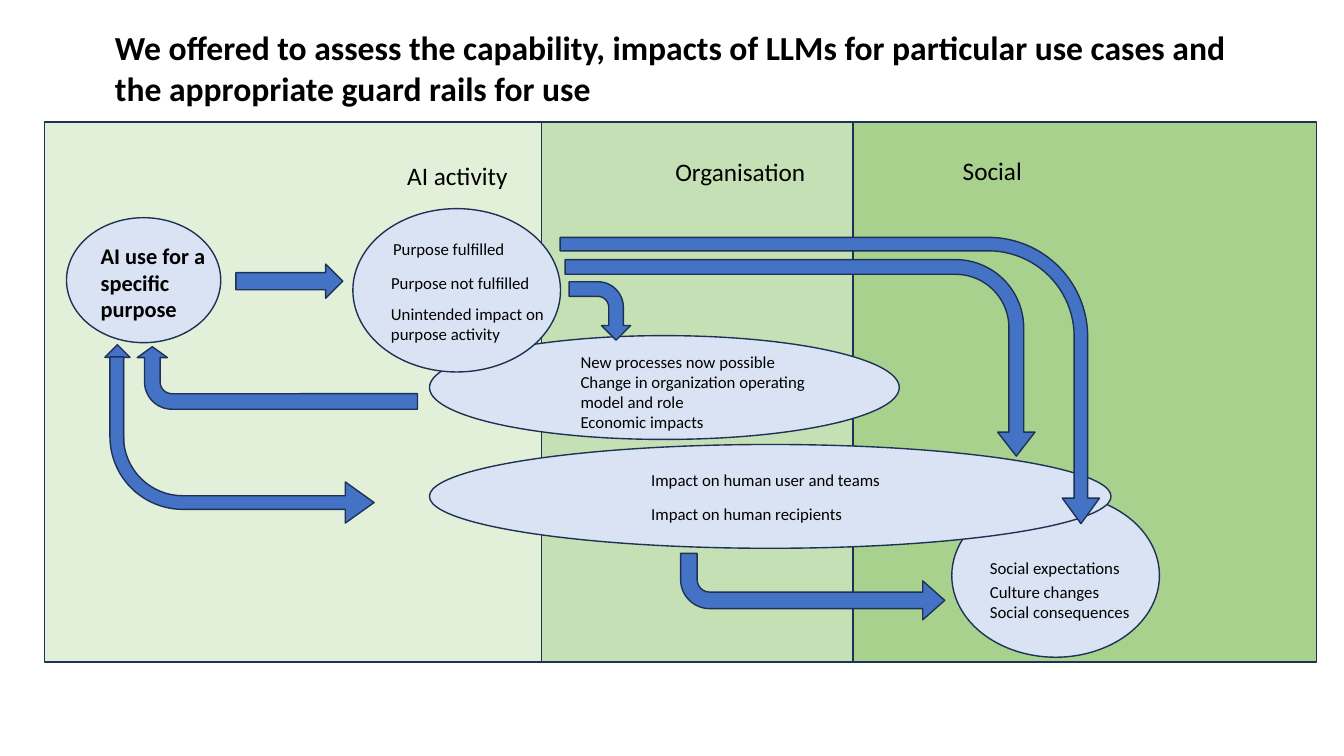
from pptx import Presentation
from pptx import util as u
from pptx.dml.color import RGBColor
from pptx.enum import shapes, text

# The grid has cells of one inch: places are (column, row, columns wide, rows high)
COLUMNS, ROWS = 13.33, 7.5
FONT = "Calibri"
BLACK = RGBColor(0x00, 0x00, 0x00)
OUTLINE = RGBColor(0x1E, 0x32, 0x56)
ARROW_BLUE = RGBColor(0x44, 0x72, 0xC4)
PALE_BLUE = RGBColor(0xDA, 0xE3, 0xF3)
PALE_GREEN = RGBColor(0xE2, 0xF0, 0xD9)
LIGHT_GREEN = RGBColor(0xC5, 0xE0, 0xB4)
MID_GREEN = RGBColor(0xA9, 0xD1, 0x8E)

TITLE = ("We offered to assess the capability, impacts of LLMs for particular "
         "use cases and the appropriate guard rails for use")
TITLE_PLACE = (1.04, 0.22, 11.51, 0.91)

BAND_TOP, BAND_HEIGHT = 1.21, 5.36
BAND_EDGES = [0.44, 5.37, 8.46, 13.06]
BAND_FILLS = [PALE_GREEN, LIGHT_GREEN, MID_GREEN]

ELLIPSES = {
    "purpose": (0.66, 2.16, 1.53, 1.24),
    "society": (9.44, 4.9, 2.06, 1.62),
    "people": (4.26, 4.41, 6.76, 1.03),
    "organisation": (4.26, 3.33, 4.66, 1.03),
    "activity": (3.5, 2.07, 2.06, 1.62),
}

# place, size, bold, wrap, paragraphs
LABELS = [
    ((3.94, 1.54, 1.21, 0.4), 18, False, False, ["AI activity"]),
    ((6.6, 1.5, 1.5, 0.4), 18, False, False, ["Organisation"]),
    ((9.45, 1.49, 0.85, 0.4), 18, False, False, ["Social"]),
    ((0.9, 2.35, 1.25, 0.91), 16, True, True, ["AI use for a specific purpose"]),
    ((3.8, 2.32, 1.32, 0.3), 12, False, False, ["Purpose fulfilled"]),
    ((3.78, 2.66, 1.59, 0.3), 12, False, False, ["Purpose not fulfilled"]),
    ((3.78, 2.96, 2.26, 0.5), 12, False, True,
     ["Unintended impact on purpose activity"]),
    ((5.66, 3.44, 2.57, 0.91), 12, False, True,
     ["New processes now possible",
      "Change in organization operating model and role",
      "Economic impacts"]),
    ((6.36, 4.61, 2.5, 0.3), 12, False, False, ["Impact on human user and teams"]),
    ((6.36, 4.95, 2.12, 0.3), 12, False, False, ["Impact on human recipients"]),
    ((9.72, 5.48, 1.51, 0.3), 12, False, False, ["Social expectations"]),
    ((9.72, 5.72, 1.86, 0.5), 12, False, True,
     ["Culture changes", "Social consequences"]),
]

STRAIGHT = shapes.MSO_SHAPE.RIGHT_ARROW
BENT = shapes.MSO_SHAPE.BENT_ARROW
RETURN_HEAD = (STRAIGHT, (0.67, 3.79, 0.99, 0.25), 270, "", [])
# kind, place before turning, rotation, flips, adjustments
ARROWS = [
    (STRAIGHT, (2.34, 2.62, 1.06, 0.34), 0, "", []),
    (BENT, (5.66, 2.78, 0.58, 0.61), 90, "", []),
    (BENT, (1.09, 3.54, 2.62, 1.65), 0, "V", [0.082, 0.124, 0.173, 0.438]),
    (BENT, (2.44, 2.36, 0.62, 2.78), 90, "HV", [0.249, 0.242, 0.173, 0.438]),
    (BENT, (6.96, 1.22, 1.95, 4.66), 90, "", [0.075, 0.095, 0.122, 0.347]),
    (BENT, (6.81, 1.1, 2.84, 5.35), 90, "", [0.047, 0.065, 0.089, 0.347]),
    (BENT, (6.75, 5.49, 2.62, 0.66), 0, "V", [0.249, 0.293, 0.331, 0.438]),
]


def grid(place):
    return [u.Inches(cells) for cells in place]


def add_filled(slide, kind, place, fill):
    shape = slide.shapes.add_shape(kind, *grid(place))
    shape.shadow.inherit = False
    shape.fill.solid()
    shape.fill.fore_color.rgb = fill
    shape.line.color.rgb = OUTLINE
    shape.line.width = u.Pt(1)
    return shape


def add_arrow(slide, kind, place, rotation, flips, adjustments):
    arrow = add_filled(slide, kind, place, ARROW_BLUE)
    arrow.rotation = rotation
    for axis in flips:
        arrow.element.spPr.xfrm.set("flip" + axis, "1")
    for index, value in enumerate(adjustments):
        arrow.adjustments[index] = value


def write(frame, lines, size, bold):
    for index, line in enumerate(lines):
        paragraph = frame.paragraphs[0] if index == 0 else frame.add_paragraph()
        paragraph.alignment = text.PP_ALIGN.LEFT
        run = paragraph.add_run()
        run.text = line
        run.font.name = FONT
        run.font.size = u.Pt(size)
        run.font.bold = bold
        run.font.color.rgb = BLACK


def add_title(slide):
    title = slide.shapes.title
    title.left, title.top, title.width, title.height = grid(TITLE_PLACE)
    frame = title.text_frame
    frame.word_wrap = True
    frame.auto_size = text.MSO_AUTO_SIZE.NONE
    frame.vertical_anchor = text.MSO_ANCHOR.TOP
    write(frame, [TITLE], 24, True)


def add_label(slide, place, size, bold, wrap, lines):
    frame = slide.shapes.add_textbox(*grid(place)).text_frame
    frame.word_wrap = wrap
    frame.auto_size = text.MSO_AUTO_SIZE.SHAPE_TO_FIT_TEXT
    write(frame, lines, size, bold)


def main():
    presentation = Presentation()
    presentation.slide_width = u.Inches(COLUMNS)
    presentation.slide_height = u.Inches(ROWS)
    slide = presentation.slides.add_slide(presentation.slide_layouts[5])

    add_title(slide)
    for left, right, fill in zip(BAND_EDGES, BAND_EDGES[1:], BAND_FILLS):
        place = (left, BAND_TOP, right - left, BAND_HEIGHT)
        add_filled(slide, shapes.MSO_SHAPE.RECTANGLE, place, fill)
    add_arrow(slide, *RETURN_HEAD)
    for place in ELLIPSES.values():
        add_filled(slide, shapes.MSO_SHAPE.OVAL, place, PALE_BLUE)
    for label in LABELS:
        add_label(slide, *label)
    for arrow in ARROWS:
        add_arrow(slide, *arrow)

    presentation.save("out.pptx")


if __name__ == "__main__":
    main()
